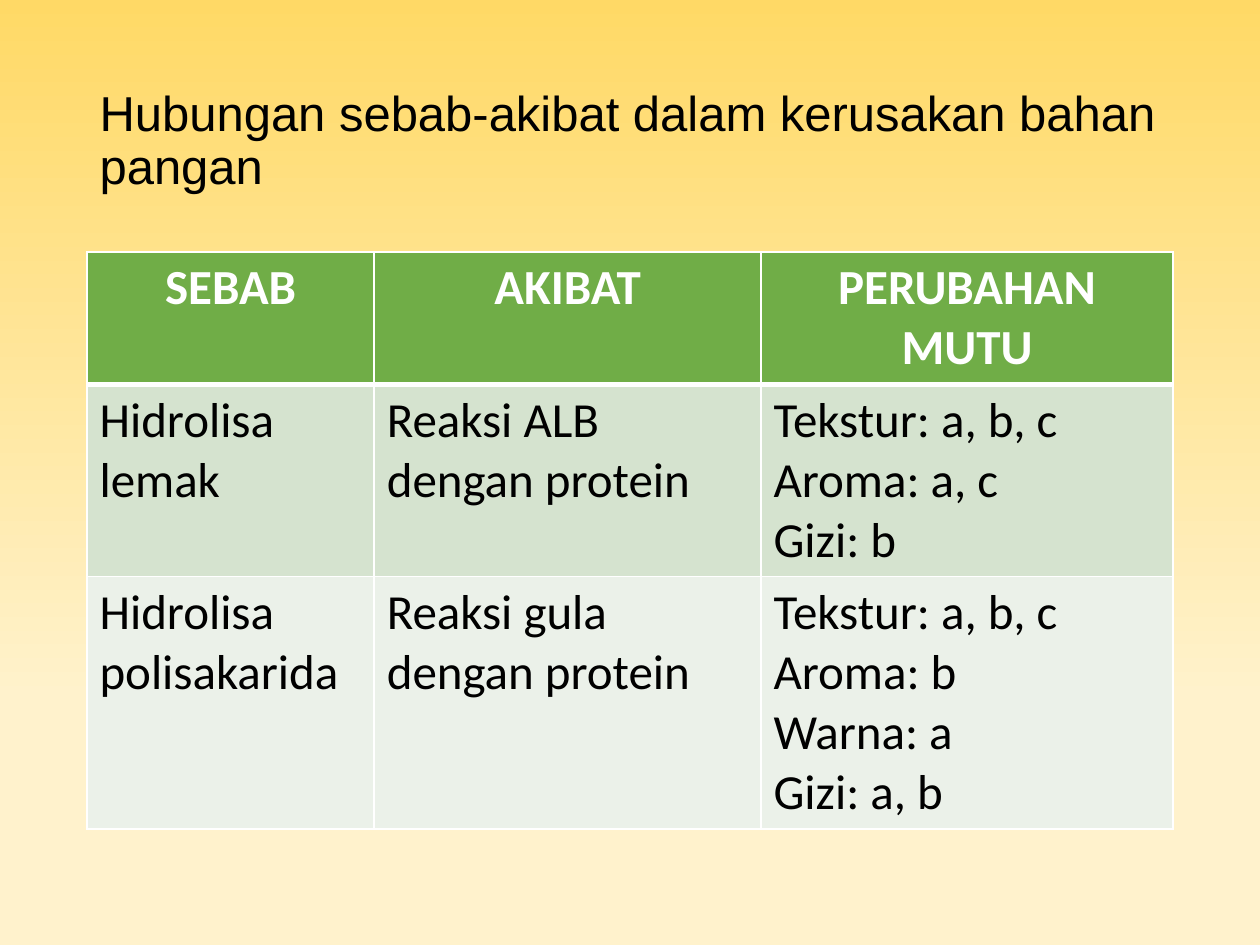
from lxml import etree
from pptx import Presentation
from pptx.dml.color import RGBColor
from pptx.enum import text
from pptx.oxml import ns
from pptx.util import Inches, Pt

TITLE = "Hubungan sebab-akibat dalam kerusakan bahan pangan"
ROWS = [
    ("SEBAB", "AKIBAT", "PERUBAHAN MUTU"),
    ("Hidrolisa lemak", "Reaksi ALB dengan protein",
     "Tekstur: a, b, c\nAroma: a, c\nGizi: b"),
    ("Hidrolisa polisakarida", "Reaksi gula dengan protein",
     "Tekstur: a, b, c\nAroma: b\nWarna: a\nGizi: a, b"),
]
COLUMN_WIDTHS = (2.28, 3.07, 3.27)
ROW_HEIGHTS = (1.04, 1.52, 2)
LEFT, WIDTH = 0.69, 8.62
COLORS = {"gold": "FFD966", "cream": "FFF2CC", "header": "70AD47",
          "band_1": "D5E3CF", "band_2": "EBF1E9",
          "white": "FFFFFF", "black": "000000"}
ROW_FILLS = ("header", "band_1", "band_2")


def color(name):
    return RGBColor.from_string(COLORS[name])


def format_paragraph(paragraph, font_name, color_name, bold, alignment):
    paragraph.alignment = alignment
    paragraph.font.name = font_name
    paragraph.font.size = Pt(28)
    paragraph.font.bold = bold
    paragraph.font.color.rgb = color(color_name)


def add_borders(cell, bottom, top):
    """Draw white borders; line elements come before the cell's fill."""
    properties = cell._tc.get_or_add_tcPr()
    sides = (("lnL", 1), ("lnR", 1), ("lnT", top), ("lnB", bottom))
    for position, (side, points) in enumerate(sides):
        line = etree.Element(ns.qn(f"a:{side}"), w=str(Pt(points)))
        fill = etree.SubElement(line, ns.qn("a:solidFill"))
        etree.SubElement(fill, ns.qn("a:srgbClr"), val=COLORS["white"])
        properties.insert(position, line)


presentation = Presentation()
presentation.slide_width, presentation.slide_height = Inches(10), Inches(7.5)
slide = presentation.slides.add_slide(presentation.slide_layouts[5])

# Background gradient, top to bottom
background = slide.background.fill
background.gradient()
background.gradient_angle = 270
for stop, position, name in zip(background.gradient_stops, (0, 0.74), ("gold", "cream")):
    stop.position = position
    stop.color.rgb = color(name)

# Title
title = slide.shapes.title
title.left, title.top = Inches(LEFT), Inches(0.4)
title.width, title.height = Inches(WIDTH), Inches(1.45)
title.text_frame.text = TITLE
title.text_frame.word_wrap = True
title.text_frame.auto_size = text.MSO_AUTO_SIZE.NONE
title.text_frame.vertical_anchor = text.MSO_ANCHOR.MIDDLE
heading = title.text_frame.paragraphs[0]
heading.line_spacing = 0.9
format_paragraph(heading, "Arial", "black", False, text.PP_ALIGN.LEFT)

# Cause and effect table
table = slide.shapes.add_table(
    len(ROWS), len(COLUMN_WIDTHS), Inches(LEFT), Inches(2),
    Inches(WIDTH), Inches(sum(ROW_HEIGHTS))).table
for column, width in zip(table.columns, COLUMN_WIDTHS):
    column.width = Inches(width)
for row_index, values in enumerate(ROWS):
    table.rows[row_index].height = Inches(ROW_HEIGHTS[row_index])
    is_header = row_index == 0
    for column_index, value in enumerate(values):
        cell = table.cell(row_index, column_index)
        cell.text = value
        cell.fill.solid()
        cell.fill.fore_color.rgb = color(ROW_FILLS[row_index])
        add_borders(cell, bottom=3 if is_header else 1,
                    top=3 if row_index == 1 else 1)
        for paragraph in cell.text_frame.paragraphs:
            format_paragraph(
                paragraph, "Calibri", "white" if is_header else "black", is_header,
                text.PP_ALIGN.CENTER if is_header else text.PP_ALIGN.LEFT)

presentation.save("out.pptx")
